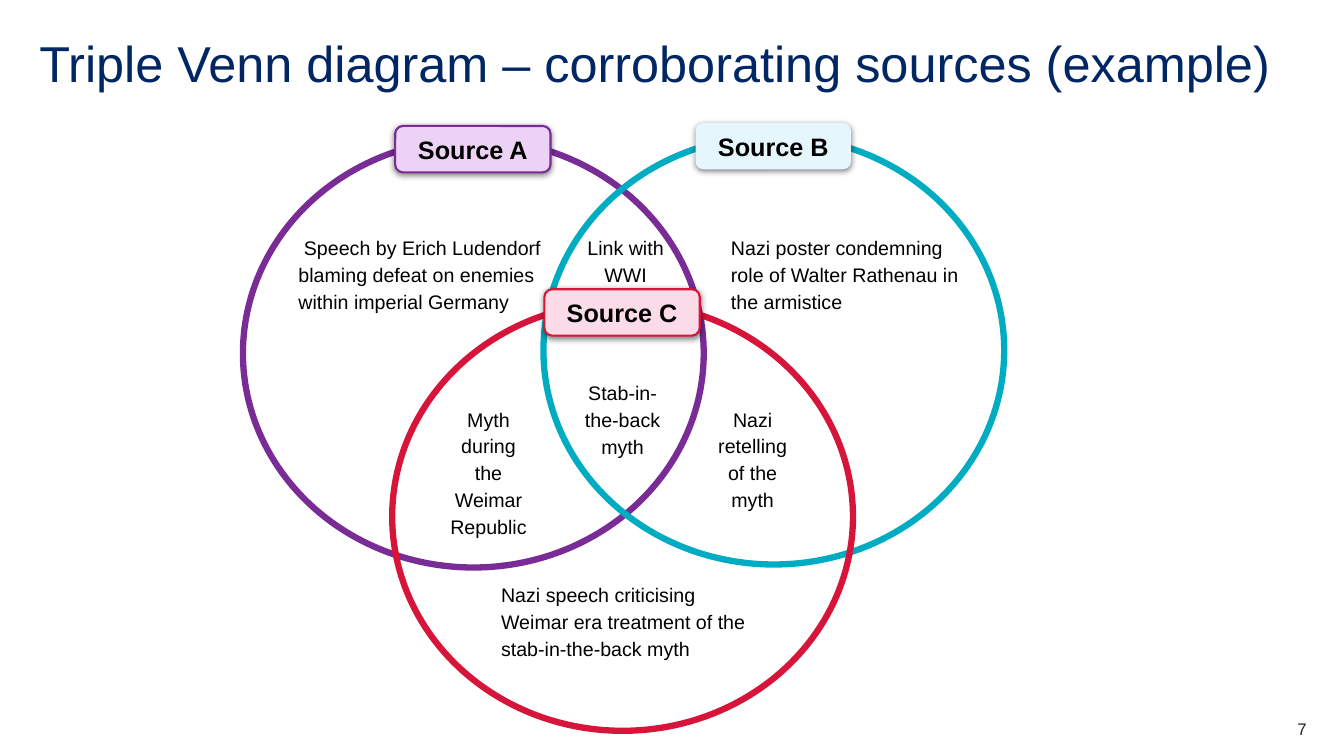
from lxml.etree import SubElement
from pptx import Presentation
from pptx.dml.color import RGBColor
from pptx.enum.shapes import MSO_SHAPE
from pptx.enum.text import MSO_ANCHOR, PP_ALIGN
from pptx.oxml.ns import qn
from pptx.util import Emu, Pt

PX = 9144
CIRCLE_WIDTH, CIRCLE_HEIGHT = 457, 425
LABEL_WIDTH, LABEL_HEIGHT = 154, 46

SOURCES = [
    dict(name="Source A", left=241, top=138, color="792C96", tint="ECD3F5", border="792C96",
         note=" Speech by Erich Ludendorf blaming defeat on enemies within imperial Germany",
         note_box=(42, 80, 282, 93)),
    dict(name="Source B", left=539, top=135, color="00ACC2", tint="E5F7FC", border=None,
         note="Nazi poster condemning role of Walter Rathenau in the armistice",
         note_box=(173, 83, 263, 94)),
    dict(name="Source C", left=389, top=300, color="D7153A", tint="FBDBE7", border="D7153A",
         note="Nazi speech criticising Weimar era treatment of the stab-in-the-back myth",
         note_box=(95, 262, 274, 88)),
]

OVERLAPS = [
    ("Link with WWI", (324, 80, 111, 57)),
    ("Myth during the Weimar Republic", (188, 250, 111, 114)),
    ("Nazi retelling of the myth", (450, 250, 111, 114)),
    ("Stab-in-the-back myth", (321, 224, 111, 114)),
]


def px(*lengths):
    return [Emu(length * PX) for length in lengths]


def color_of(code):
    return RGBColor.from_string(code)


def write(shape, text, size=14, color="000000", bold=False, align=PP_ALIGN.LEFT,
          anchor=MSO_ANCHOR.TOP, inset=(0, 0), spacing=None, after=0):
    frame = shape.text_frame
    frame.word_wrap = True
    frame.vertical_anchor = anchor
    frame.margin_left = frame.margin_right = Emu(inset[0] * PX)
    frame.margin_top = frame.margin_bottom = Emu(inset[1] * PX)
    para = frame.paragraphs[0]
    para.alignment = align
    para.space_before = Pt(0)
    para.space_after = Pt(after)
    if spacing:
        para.line_spacing = spacing
    span = para.add_run()
    span.text = text
    span.font.name = "Arial"
    span.font.size = Pt(size)
    span.font.bold = bold
    span.font.color.rgb = color_of(color)


def add_note(page, text, box, align=PP_ALIGN.LEFT):
    note = page.shapes.add_textbox(*px(*box))
    write(note, text, align=align, inset=(13, 13), spacing=1.14, after=12)


def add_panel(page, kind, box, fill=None, border=None, width=1.5):
    panel = page.shapes.add_shape(kind, *px(*box))
    panel.shadow.inherit = False
    if fill:
        panel.fill.solid()
        panel.fill.fore_color.rgb = color_of(fill)
    else:
        panel.fill.background()
    if border:
        panel.line.color.rgb = color_of(border)
        panel.line.width = Pt(width)
    else:
        panel.line.fill.background()
    return panel


def add_drop_shadow(shape):
    effects = shape.element.spPr.find(qn("a:effectLst"))
    shadow = SubElement(effects, qn("a:outerShdw"), blurRad=str(Pt(4.5)),
                        dist=str(Pt(1.5)), dir="5400000", algn="t", rotWithShape="0")
    shade = SubElement(shadow, qn("a:srgbClr"), val="000000")
    SubElement(shade, qn("a:alpha"), val="50000")


def add_source(page, name, left, top, color, tint, border, note, note_box):
    add_panel(page, MSO_SHAPE.OVAL, (left, top, CIRCLE_WIDTH, CIRCLE_HEIGHT),
              border=color, width=4.5)
    label_left = left + (CIRCLE_WIDTH - LABEL_WIDTH) // 2
    label = add_panel(page, MSO_SHAPE.ROUNDED_RECTANGLE,
                      (label_left, top - 13, LABEL_WIDTH, LABEL_HEIGHT), tint, border)
    add_drop_shadow(label)
    write(label, name, size=18, bold=True, align=PP_ALIGN.CENTER,
          anchor=MSO_ANCHOR.MIDDLE, inset=(9, 4))
    x, y, width, height = note_box
    add_note(page, note, (left + x, top + y, width, height))


def add_venn(page, left, top):
    for source in SOURCES:
        add_source(page, **source)
    for text, (x, y, width, height) in OVERLAPS:
        add_note(page, text, (left + x, top + y, width, height), PP_ALIGN.CENTER)


def add_title(page, text, box):
    title = page.shapes.title
    title.left, title.top, title.width, title.height = px(*box)
    write(title, text, size=36, color="002664", spacing=0.9)


def add_page_number(page, number, box):
    write(page.shapes.add_textbox(*px(*box)), number, size=12, color="22272B",
          align=PP_ALIGN.RIGHT)


def main():
    deck = Presentation()
    deck.slide_width, deck.slide_height = px(1333, 750)
    page = deck.slides.add_slide(deck.slide_layouts[5])
    add_title(page, "Triple Venn diagram – corroborating sources (example)", (39, 39, 1256, 60))
    add_venn(page, 241, 138)
    add_page_number(page, "7", (1217, 713, 79, 20))
    deck.save("out.pptx")


if __name__ == "__main__":
    main()
